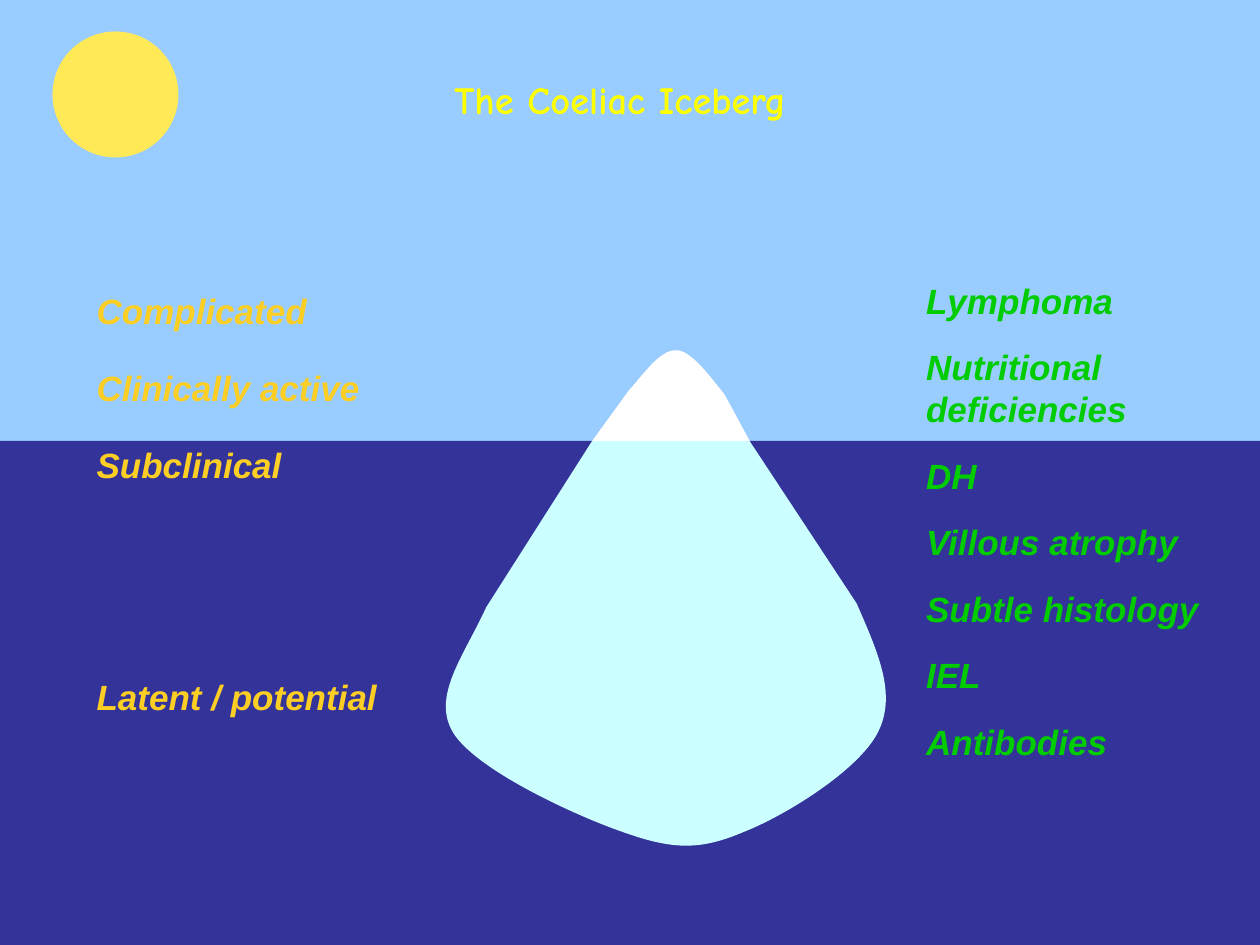
from dataclasses import dataclass

from lxml import etree
from pptx import Presentation
from pptx.dml.color import RGBColor
from pptx.enum import shapes, text
from pptx.oxml import ns
from pptx.util import Pt


@dataclass(frozen=True)
class Theme:
    sky: str = "99CCFF"
    sea: str = "333399"
    sun: str = "FFE957"
    tip: str = "FFFFFF"
    ice: str = "CCFFFF"
    title: str = "FFFF00"
    stage: str = "FDCF25"
    sign: str = "00CC00"
    head: str = "Comic Neue"
    body: str = "Arial"
    big: int = 22
    small: int = 20


THEME = Theme()
STAGES = ["Complicated", "Clinically active", "Subclinical", "Latent / potential"]
SIGNS = ["Lymphoma", "Nutritional deficiencies", "DH", "Villous atrophy",
         "Subtle histology", "IEL", "Antibodies"]

LEFT, RIGHT = (92.4, 53), (182.4, 53)
TIP = [
    [(140.6, 1.2)],
    [(131.3, 0.4), (121.2, 15.6), (113.3, 24.2)],
    [LEFT], [RIGHT], [(168, 26.4)],
    [(160.8, 17.7), (149.3, 1.2), (140.6, 1.2)],
]
BASE = [
    [(13.2, 220)],
    [(0.2, 199.2), (19, 176.1), (31.9, 148)],
    [LEFT], [RIGHT], [(243.6, 145.9)],
    [(255.8, 174), (266.6, 197.7), (255.8, 219.3)],
    [(245, 240.9), (203.3, 266.8), (179.5, 276.2)],
    [(155.8, 286.3), (140.6, 287), (113.3, 277.6)],
    [(85.2, 268.3), (26.9, 241.6), (13.2, 220)],
]


def place(shape, box):
    shape.left, shape.top, shape.width, shape.height = map(Pt, box)


def paint(shape, color):
    shape.shadow.inherit = False
    shape.fill.solid()
    shape.fill.fore_color.rgb = RGBColor.from_string(color)
    shape.line.fill.background()


def style(para, name, size, color, slant=False):
    for run in para.runs:
        font = run.font
        font.name, font.size = name, Pt(size)
        font.bold, font.italic = True, slant
        font.color.rgb = RGBColor.from_string(color)


def add_block(slide, kind, box, color):
    shape = slide.shapes.add_shape(kind, *map(Pt, box))
    paint(shape, color)
    return shape


def set_title(shape, box, words):
    place(shape, box)
    frame = shape.text_frame
    frame.text = words
    frame.auto_size = text.MSO_AUTO_SIZE.NONE
    frame.vertical_anchor = text.MSO_ANCHOR.MIDDLE
    para = frame.paragraphs[0]
    para.alignment = text.PP_ALIGN.CENTER
    style(para, THEME.head, THEME.big, THEME.title)


def set_list(shape, box, items, color, after):
    place(shape, box)
    frame = shape.text_frame
    frame.text = "\n".join(items)
    frame.word_wrap = True
    frame.auto_size = text.MSO_AUTO_SIZE.SHAPE_TO_FIT_TEXT
    for para in frame.paragraphs:
        para.space_before, para.space_after = Pt(10), Pt(after)
        style(para, THEME.body, THEME.small, color, True)
        props = para._p.get_or_add_pPr()
        props.set("marL", "0")
        props.set("indent", "0")
        etree.SubElement(props, ns.qn("a:buNone"))
    return frame.paragraphs


def bend(shape, parts):
    track = shape.element.find(".//" + ns.qn("a:path"))
    lines = iter(track.findall(ns.qn("a:lnTo")))
    for part in parts[1:]:
        nodes = [next(lines) for _ in part]
        if len(nodes) == 3:
            curve = track.makeelement(ns.qn("a:cubicBezTo"))
            nodes[0].addprevious(curve)
            for node in nodes:
                curve.append(node[0])
                track.remove(node)


def add_berg(slide, box):
    left, top = box
    for parts, color in ((TIP, THEME.tip), (BASE, THEME.ice)):
        points = [(Pt(left + x), Pt(top + y)) for part in parts for x, y in part]
        pen = slide.shapes.build_freeform(*points[0], scale=1.0)
        pen.add_line_segments(points[1:], close=True)
        shape = pen.convert_to_shape()
        bend(shape, parts)
        paint(shape, color)


def main():
    deck = Presentation()
    deck.slide_width, deck.slide_height = Pt(720), Pt(540)
    slide = deck.slides.add_slide(deck.slide_layouts[3])
    back = slide.background.fill
    back.solid()
    back.fore_color.rgb = RGBColor.from_string(THEME.sky)

    title, stages, signs = slide.placeholders
    sea = add_block(slide, shapes.MSO_SHAPE.RECTANGLE, (0, 252, 720, 288), THEME.sea)
    title.element.addprevious(sea.element)
    set_title(title, (59.5, 20.5, 589.7, 72), "The Coeliac Iceberg")
    rows = set_list(stages, (48, 162, 180, 319), STAGES, THEME.stage, 10)
    rows[-1].space_before = Pt(98.4)
    set_list(signs, (522, 156, 198, 436.3), SIGNS, THEME.sign, 4)
    add_berg(slide, (246, 199))
    add_block(slide, shapes.MSO_SHAPE.OVAL, (30, 18, 72, 72), THEME.sun)
    deck.save("out.pptx")


if __name__ == "__main__":
    main()
